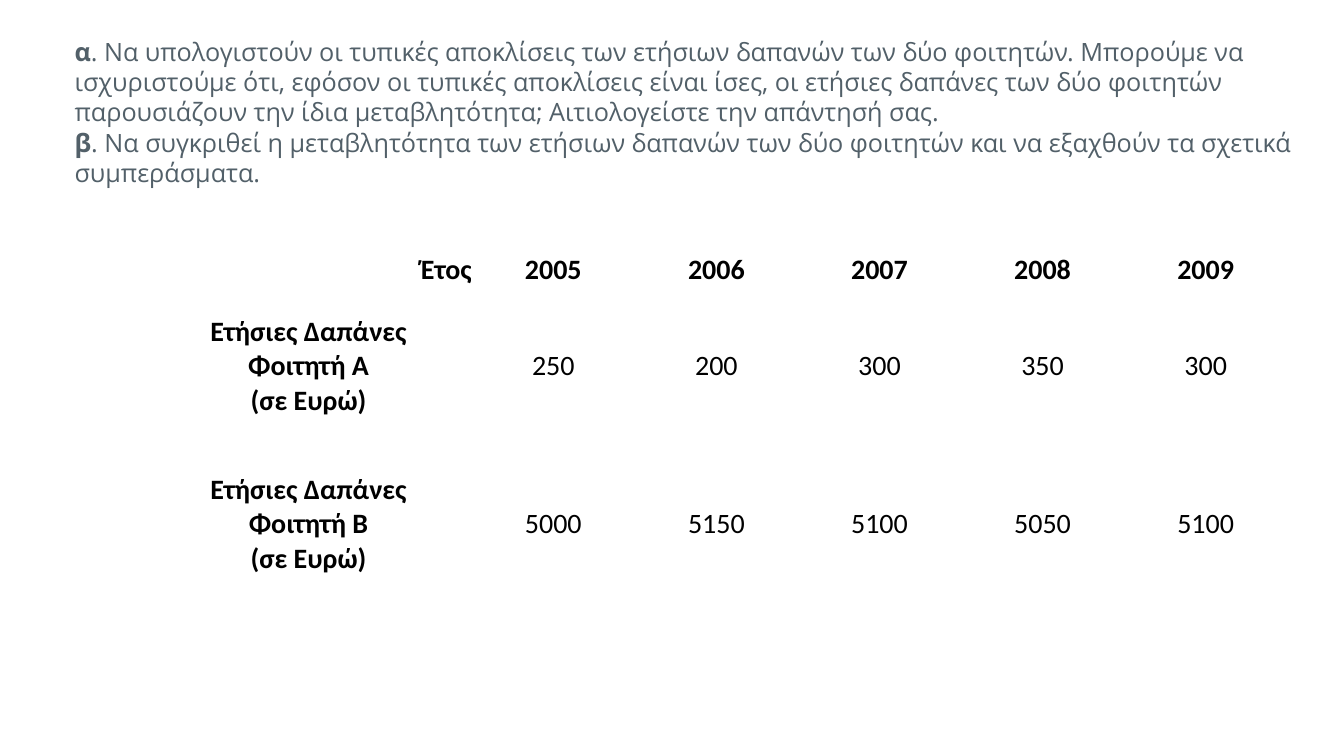
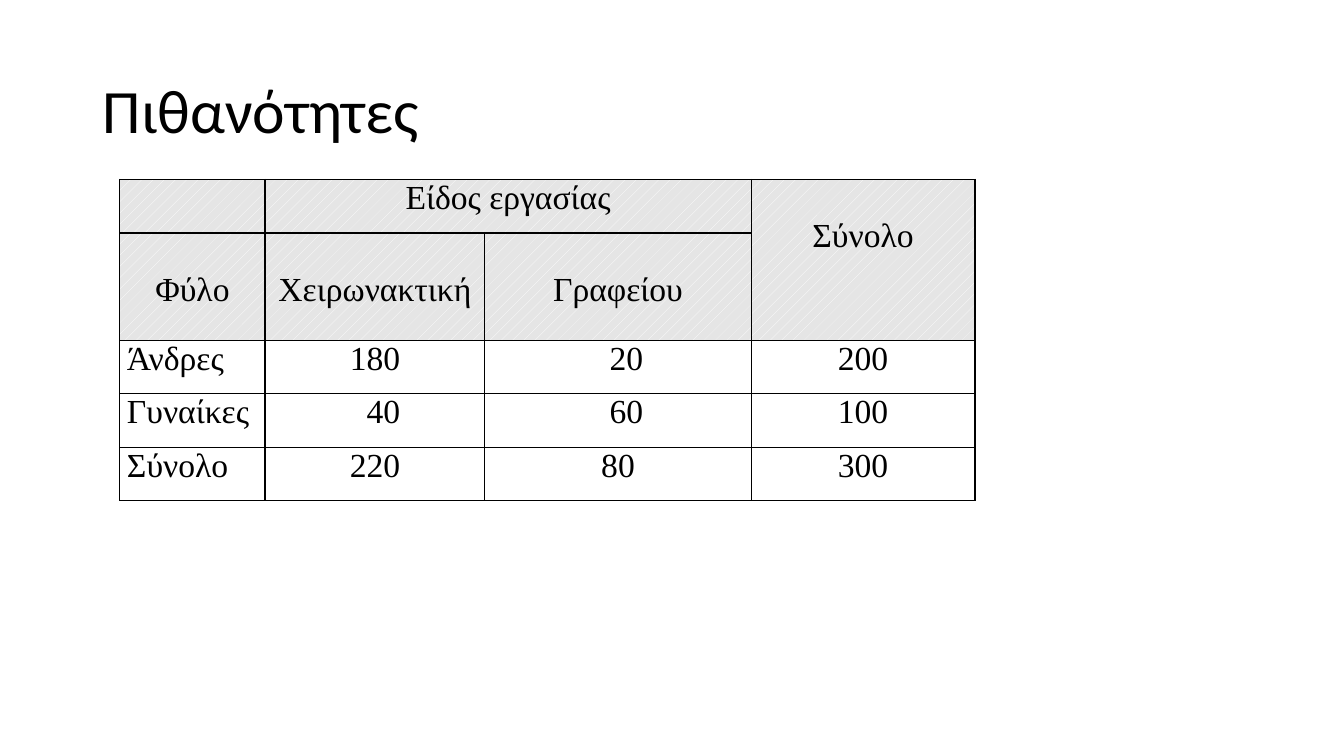
from lxml.etree import SubElement
from pptx import Presentation
from pptx.dml.color import RGBColor
from pptx.enum.dml import MSO_PATTERN
from pptx.enum.text import MSO_ANCHOR, MSO_AUTO_SIZE, PP_ALIGN
from pptx.oxml.ns import qn
from pptx.util import Cm, Pt

BLACK, WHITE, SLATE, GREY = "000000", "FFFFFF", "526069", "E5E5E5"
SANS, SERIF, PROSE = "Calibri", "Times New Roman", "Open Sans"
LEFT, MID, RIGHT, FULL = PP_ALIGN.LEFT, PP_ALIGN.CENTER, PP_ALIGN.RIGHT, PP_ALIGN.JUSTIFY
LINE, SIDE, NUDGE = 0.97, 0.18, 0.42

TASKS = [
    ("α", ". Να υπολογιστούν οι τυπικές αποκλίσεις των ετήσιων δαπανών των δύο φοιτητών. "
          "Μπορούμε να ισχυριστούμε ότι, εφόσον οι τυπικές αποκλίσεις είναι ίσες, "
          "οι ετήσιες δαπάνες των δύο φοιτητών παρουσιάζουν την ίδια μεταβλητότητα; "
          "Αιτιολογείστε την απάντησή σας."),
    ("β", ". Να συγκριθεί η μεταβλητότητα των ετήσιων δαπανών των δύο φοιτητών "
          "και να εξαχθούν τα σχετικά συμπεράσματα."),
]
COSTS = [
    ["Έτος", "2005", "2006", "2007", "2008", "2009"],
    ["Ετήσιες Δαπάνες\nΦοιτητή Α\n(σε Ευρώ)", "250", "200", "300", "350", "300"],
    ["Ετήσιες Δαπάνες\nΦοιτητή Β\n(σε Ευρώ)", "5000", "5150", "5100", "5050", "5100"],
]
JOBS = [
    ["", "Είδος εργασίας", "", "Σύνολο"],
    ["Φύλο", "Χειρωνακτική", "Γραφείου", ""],
    ["Άνδρες", "180", "20", "200"],
    ["Γυναίκες", "40", "60", "100"],
    ["Σύνολο", "220", "80", "300"],
]
LOWERED = {(0, 3), (1, 0), (1, 1), (1, 2)}
NUDGED = {(2, 2), (3, 1), (3, 2)}


def paint(target, code):
    target.rgb = RGBColor.from_string(code)


def write(frame, text, lead="", font=SANS, size=20, color=BLACK, bold=False, align=LEFT, space=None):
    para = frame.paragraphs[0]
    if para.runs:
        para = frame.add_paragraph()
    para.alignment = align
    para.line_spacing = space
    parts = [(lead, True)] if lead else []
    parts += [(line, bold) for line in text.split("\n")]
    for spot, (words, heavy) in enumerate(parts):
        if spot > bool(lead):
            para.add_line_break()
        run = para.add_run()
        run.text = words
        run.font.name, run.font.size, run.font.bold = font, Pt(size), heavy
        paint(run.font.color, color)


def add_box(slide, left, top, width, height):
    frame = slide.shapes.add_textbox(Cm(left), Cm(top), Cm(width), Cm(height)).text_frame
    frame.word_wrap = True
    return frame


def add_grid(slide, left, top, widths, heights):
    grid = slide.shapes.add_table(len(heights), len(widths), Cm(left), Cm(top),
                                  Cm(sum(widths)), Cm(sum(heights))).table
    grid.first_row = grid.horz_banding = False
    for col, width in zip(grid.columns, widths):
        col.width = Cm(width)
    for row, height in zip(grid.rows, heights):
        row.height = Cm(height)
    return grid


def pad(cell, left=0, top=0, right=0):
    cell.margin_left, cell.margin_top = Cm(left), Cm(top)
    cell.margin_right, cell.margin_bottom = Cm(right), Cm(0)


def frame_cell(cell):
    props = cell._tc.get_or_add_tcPr()
    for side in ("lnL", "lnR", "lnT", "lnB"):
        edge = SubElement(props, qn("a:" + side), w=str(Pt(1)))
        fill = SubElement(edge, qn("a:solidFill"))
        SubElement(fill, qn("a:srgbClr"), val=BLACK)


def hatch(cell):
    cell.fill.patterned()
    cell.fill.pattern = MSO_PATTERN.PERCENT_10
    paint(cell.fill.fore_color, WHITE)
    paint(cell.fill.back_color, GREY)


def draw_costs(slide):
    grid = add_grid(slide, 3.66, 6.35, [8.23] + [4.11] * 5, [0.89, 3.98, 3.98])
    for r, row in enumerate(COSTS):
        for c, text in enumerate(row):
            cell = grid.cell(r, c)
            pad(cell)
            cell.vertical_anchor = MSO_ANCHOR.MIDDLE
            cell.fill.solid()
            paint(cell.fill.fore_color, WHITE)
            write(cell.text_frame, text, bold=r == 0 or c == 0,
                  align=RIGHT if r == c == 0 else MID)
    frame = add_box(slide, 1.63, 0.79, 31.39, 4.11)
    frame.auto_size = MSO_AUTO_SIZE.SHAPE_TO_FIT_TEXT
    for lead, text in TASKS:
        write(frame, text, lead=lead, font=PROSE, size=18, color=SLATE)


def draw_jobs(slide):
    title = add_box(slide, 2.34, 1.02, 29.21, 3.68)
    title.vertical_anchor = MSO_ANCHOR.MIDDLE
    write(title, "Πιθανότητες", size=44, space=0.9)
    grid = add_grid(slide, 3.02, 4.52, [3.66, 5.54, 6.71, 5.64], [1.35, 2.7] + [1.35] * 3)
    grid.cell(0, 1).merge(grid.cell(0, 2))
    grid.cell(0, 3).merge(grid.cell(1, 3))
    for r, row in enumerate(JOBS):
        for c, text in enumerate(row):
            cell = grid.cell(r, c)
            pad(cell, left=SIDE + NUDGE * ((r, c) in NUDGED),
                top=LINE * ((r, c) in LOWERED), right=SIDE)
            frame_cell(cell)
            if r < 2:
                hatch(cell)
            else:
                cell.fill.background()
            if text:
                write(cell.text_frame, text, font=SERIF, size=24,
                      align=FULL if r > 1 and c == 0 else MID)


def main():
    deck = Presentation()
    deck.slide_width, deck.slide_height = Cm(33.87), Cm(19.05)
    for draw in (draw_costs, draw_jobs):
        draw(deck.slides.add_slide(deck.slide_layouts[6]))
    deck.save("out.pptx")


if __name__ == "__main__":
    main()
